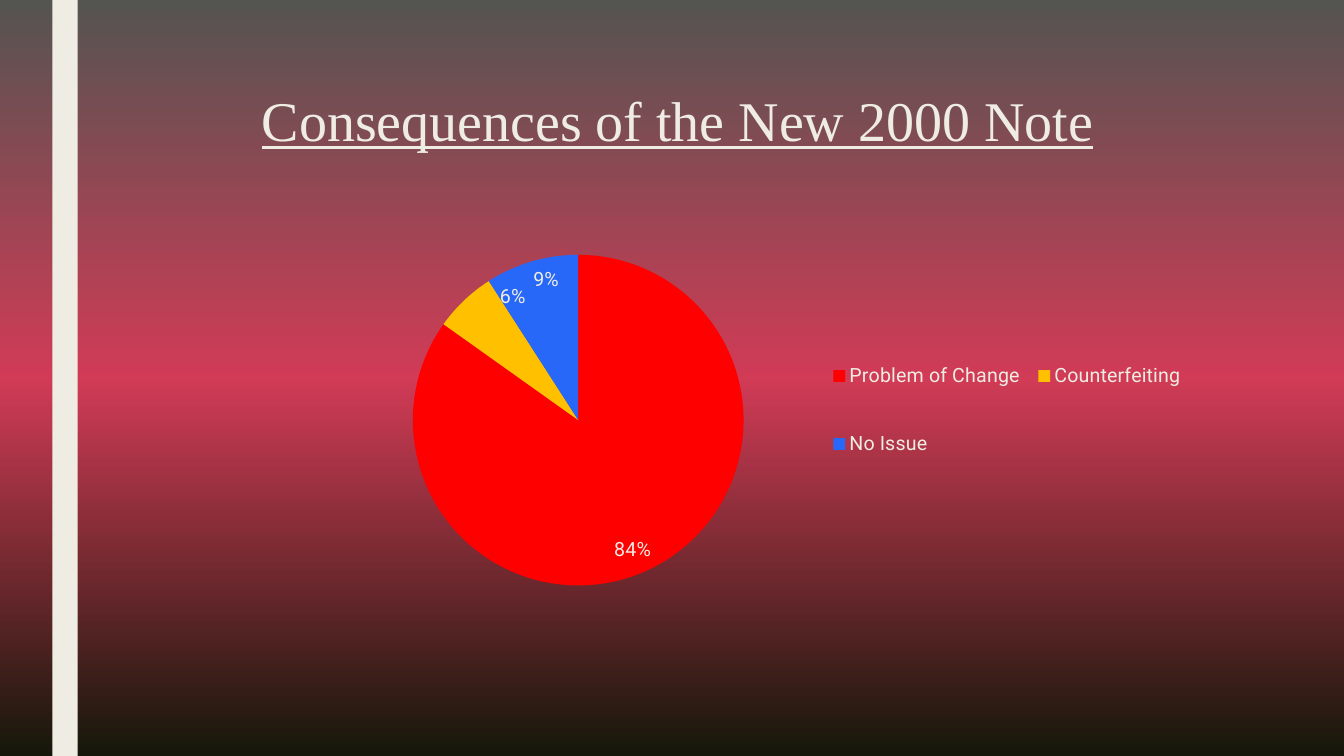
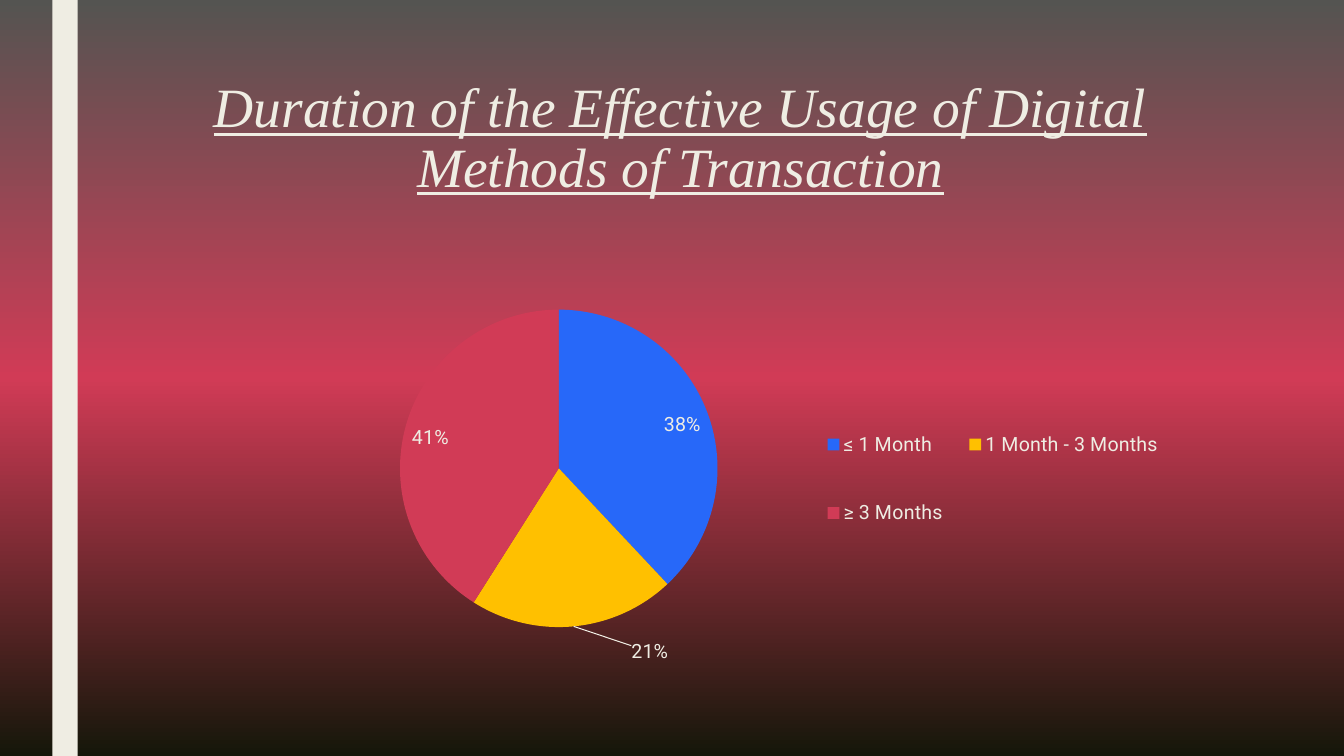
from copy import deepcopy
from dataclasses import dataclass

from lxml import etree
from pptx import Presentation
from pptx import util as u
from pptx.chart.chart import Chart
from pptx.chart.data import CategoryChartData
from pptx.dml.color import RGBColor
from pptx.enum import chart as kinds, shapes, text
from pptx.oxml import parse_xml
from pptx.oxml.ns import nsdecls, qn
from pptx.slide import Slide

CREAM = RGBColor(0xEF, 0xED, 0xE3)
GREY = RGBColor(0x54, 0x54, 0x51)
ROSE = RGBColor(0xD1, 0x3B, 0x56)
DARK = RGBColor(0x15, 0x17, 0x0A)
RED = RGBColor(0xFF, 0x00, 0x00)
GOLD = RGBColor(0xFF, 0xC0, 0x00)
BLUE = RGBColor(0x27, 0x68, 0xF9)

SERIF = "Times New Roman"
SANS = "Roboto"
WIDTH = 10.5
KEY = (0.62, 0.33, 0.35, 0.44)


@dataclass(frozen=True)
class Title:
    words: str
    left: float
    top: float
    size: float
    slant: bool = False


@dataclass(frozen=True)
class Slice:
    name: str
    value: int
    color: RGBColor


@dataclass(frozen=True)
class Pie:
    left: float
    top: float
    height: float
    plot: tuple[float, ...]
    shift: tuple[float, float]
    slices: tuple[Slice, ...]


@dataclass(frozen=True)
class Page:
    title: Title
    pie: Pie


PAGES = (
    Page(
        Title("Consequences of the New 2000 Note", 1.47, 0.88, 40),
        Pie(1.64, 1.84, 4.05, (0, 0.17, 0.78, 0.81), (0.03, -0.05), (
            Slice("Problem of Change", 84, RED),
            Slice("Counterfeiting", 6, GOLD),
            Slice("No Issue", 9, BLUE),
        )),
    ),
    Page(
        Title("Duration of the Effective Usage of Digital Methods of Transaction",
              1.5, 0.75, 39.6, True),
        Pie(1.5, 2.5, 4.09, (0.02, 0.14, 0.73, 0.77), (0.09, 0.12), (
            Slice("≤ 1 Month", 38, BLUE),
            Slice("1 Month - 3 Months", 21, GOLD),
            Slice("≥ 3 Months", 41, ROSE),
        )),
    ),
)


def paint_back(deck) -> None:
    fill = deck.slide_master.background.fill
    fill.gradient()
    fill.gradient_angle = 270
    first = fill.gradient_stops[0]._gs
    first.addnext(deepcopy(first))
    for stop, place, color in zip(fill.gradient_stops, (0, 0.5, 1), (GREY, ROSE, DARK)):
        stop.position = place
        stop.color.rgb = color


def add_bar(slide: Slide) -> None:
    bar = slide.shapes.add_shape(
        shapes.MSO_SHAPE.RECTANGLE, u.Inches(0.52), 0, u.Inches(0.25), u.Inches(7.5))
    bar.shadow.inherit = False
    bar.fill.solid()
    bar.fill.fore_color.rgb = CREAM
    bar.line.fill.background()


def add_title(slide: Slide, title: Title) -> None:
    box = slide.shapes.add_textbox(
        u.Inches(title.left), u.Inches(title.top), u.Inches(WIDTH), u.Inches(1.62))
    frame = box.text_frame
    frame.word_wrap = True
    para = frame.paragraphs[0]
    para.text = title.words
    para.alignment = text.PP_ALIGN.CENTER
    para.line_spacing = 0.89
    style(para.font, title.size, SERIF)
    para.font.italic = title.slant
    para.font.underline = True


def style(font, size: float, face: str) -> None:
    font.size = u.Pt(size)
    font.name = face
    font.color.rgb = CREAM


def make_layout(fields: dict[str, object]):
    layout = parse_xml(f"<c:layout {nsdecls('c')}><c:manualLayout/></c:layout>")
    for name, value in fields.items():
        etree.SubElement(layout[0], qn(f"c:{name}")).set("val", str(value))
    return layout


def frame_layout(area: tuple[float, ...]) -> dict[str, object]:
    return {"xMode": "edge", "yMode": "edge", **dict(zip("xywh", area))}


def place_parts(chart: Chart, pie: Pie) -> None:
    root = chart.element
    for old in root.xpath(".//c:plotArea/c:layout | .//c:legend/c:layout"):
        old.getparent().remove(old)
    plot = make_layout({"layoutTarget": "inner", **frame_layout(pie.plot)})
    root.xpath(".//c:plotArea")[0].insert(0, plot)
    root.xpath(".//c:legendPos")[0].addnext(make_layout(frame_layout(KEY)))
    root.xpath(".//c:dLbl/c:idx")[0].addnext(make_layout(dict(zip("xy", pie.shift))))
    root.xpath(".//c:ser/c:dLbls")[0].append(parse_xml(
        f"<c:leaderLines {nsdecls('c', 'a')}><c:spPr><a:ln w='9525'><a:solidFill>"
        f"<a:srgbClr val='{CREAM}'/></a:solidFill></a:ln></c:spPr></c:leaderLines>"))


def add_pie(slide: Slide, pie: Pie) -> None:
    data = CategoryChartData(number_format='0"%"')
    data.categories = [part.name for part in pie.slices]
    data.add_series("Series 1", [part.value for part in pie.slices])
    chart = slide.shapes.add_chart(
        kinds.XL_CHART_TYPE.PIE, u.Inches(pie.left), u.Inches(pie.top),
        u.Inches(WIDTH), u.Inches(pie.height), data).chart
    style(chart.font, 10, SANS)
    chart.has_title = False
    chart.has_legend = True
    chart.legend.position = kinds.XL_LEGEND_POSITION.RIGHT
    chart.legend.include_in_layout = False
    style(chart.legend.font, 14, SANS)
    plot = chart.plots[0]
    plot.vary_by_categories = True
    series = plot.series[0]
    for spot, part in enumerate(pie.slices):
        fill = series.points[spot].format.fill
        fill.solid()
        fill.fore_color.rgb = part.color
    series.data_labels.show_value = True
    for label in (series.data_labels, series.points[1].data_label):
        label.position = kinds.XL_LABEL_POSITION.INSIDE_END
        style(label.font, 14, SANS)
    place_parts(chart, pie)


def main() -> None:
    deck = Presentation()
    deck.slide_width = u.Inches(13.33)
    deck.slide_height = u.Inches(7.5)
    paint_back(deck)
    for page in PAGES:
        slide = deck.slides.add_slide(deck.slide_layouts[6])
        add_bar(slide)
        add_title(slide, page.title)
        add_pie(slide, page.pie)
    deck.save("out.pptx")


if __name__ == "__main__":
    main()
